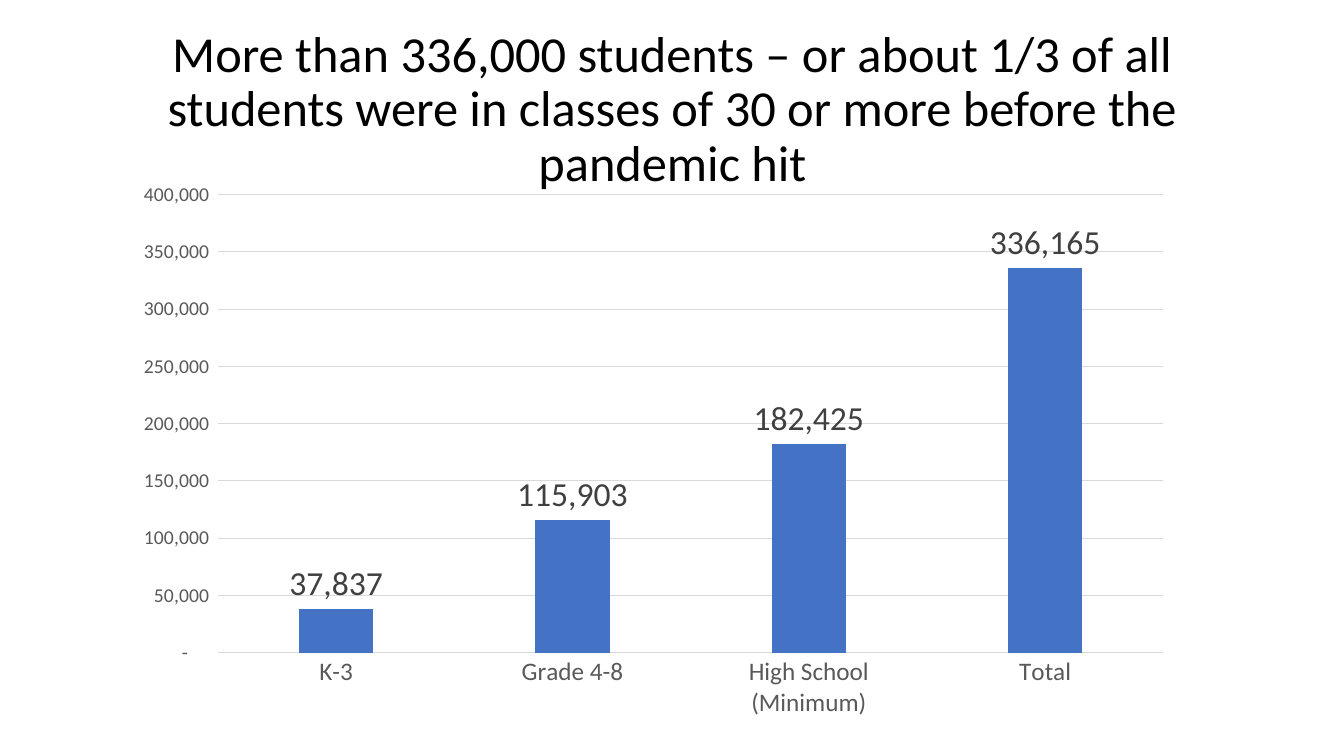
"""Build a slide with a column chart of students in large classes."""
from dataclasses import dataclass

from pptx import Presentation
from pptx.chart.data import CategoryChartData
from pptx.dml.color import RGBColor
from pptx.enum.chart import XL_CHART_TYPE as ChartType
from pptx.enum.chart import XL_LABEL_POSITION as LabelPosition
from pptx.enum.chart import XL_TICK_MARK as TickMark
from pptx.enum.text import MSO_ANCHOR as Anchor
from pptx.enum.text import PP_ALIGN as Align
from pptx.util import Inches, Pt

HEADLINE = ("More than 336,000 students – or about 1/3 of all students "
            "were in classes of 30 or more before the pandemic hit")
STUDENTS = {
    "K-3": 37837,
    "Grade 4-8": 115903,
    "High School (Minimum)": 182425,
    "Total": 336165,
}
SERIES_NAME = "Series 1"
COUNT_FORMAT = r'_(* #,##0_);_(* \(#,##0\);_(* "-"??_);_('
SLIDE_SIZE = (13.33, 7.5)
HEADLINE_BOX = (0.92, 0.37, 11.5, 1.45)
CHART_BOX = (1.17, 1.7, 10.58, 5.53)


@dataclass(frozen=True)
class Theme:
    font: str = "Calibri"
    ink: str = "000000"
    axis: str = "595959"
    label: str = "404040"
    rule: str = "D9D9D9"
    bar: str = "4472C4"
    headline_size: int = 36
    label_size: int = 24
    category_size: int = 18
    scale_size: int = 14
    rule_width: float = 0.75


THEME = Theme()


def style_font(font, size, color):
    font.name = THEME.font
    font.size = Pt(size)
    font.color.rgb = RGBColor.from_string(color)


def style_rule(line):
    line.color.rgb = RGBColor.from_string(THEME.rule)
    line.width = Pt(THEME.rule_width)


def style_axis(axis, size):
    axis.major_tick_mark = axis.minor_tick_mark = TickMark.NONE
    style_font(axis.tick_labels.font, size, THEME.axis)


def add_headline(slide):
    frame = slide.shapes.add_textbox(*map(Inches, HEADLINE_BOX)).text_frame
    frame.word_wrap = True
    frame.vertical_anchor = Anchor.MIDDLE
    paragraph = frame.paragraphs[0]
    paragraph.alignment = Align.CENTER
    paragraph.line_spacing = 0.9
    run = paragraph.add_run()
    run.text = HEADLINE
    style_font(run.font, THEME.headline_size, THEME.ink)


def add_student_chart(slide):
    counts = CategoryChartData(number_format=COUNT_FORMAT)
    counts.categories = list(STUDENTS)
    counts.add_series(SERIES_NAME, list(STUDENTS.values()))
    chart = slide.shapes.add_chart(
        ChartType.COLUMN_CLUSTERED, *map(Inches, CHART_BOX), counts).chart
    chart.has_legend = chart.has_title = False
    style_font(chart.font, THEME.scale_size, THEME.ink)

    levels = chart.category_axis
    style_axis(levels, THEME.category_size)
    style_rule(levels.format.line)

    scale = chart.value_axis
    style_axis(scale, THEME.scale_size)
    scale.minimum_scale, scale.maximum_scale = 0, 400000
    scale.major_unit = 50000
    scale.format.line.fill.background()
    scale.has_major_gridlines = True
    style_rule(scale.major_gridlines.format.line)
    scale.tick_labels.number_format = COUNT_FORMAT
    scale.tick_labels.number_format_is_linked = False

    plot = chart.plots[0]
    plot.gap_width, plot.overlap = 219, -27
    plot.vary_by_categories = False
    bars = plot.series[0]
    bars.invert_if_negative = False
    bars.format.fill.solid()
    bars.format.fill.fore_color.rgb = RGBColor.from_string(THEME.bar)

    labels = bars.data_labels
    labels.show_value = True
    labels.position = LabelPosition.OUTSIDE_END
    labels.number_format = COUNT_FORMAT
    labels.number_format_is_linked = False
    style_font(labels.font, THEME.label_size, THEME.label)


def main():
    deck = Presentation()
    deck.slide_width, deck.slide_height = map(Inches, SLIDE_SIZE)
    slide = deck.slides.add_slide(deck.slide_layouts[6])
    add_headline(slide)
    add_student_chart(slide)
    deck.save("out.pptx")


if __name__ == "__main__":
    main()
